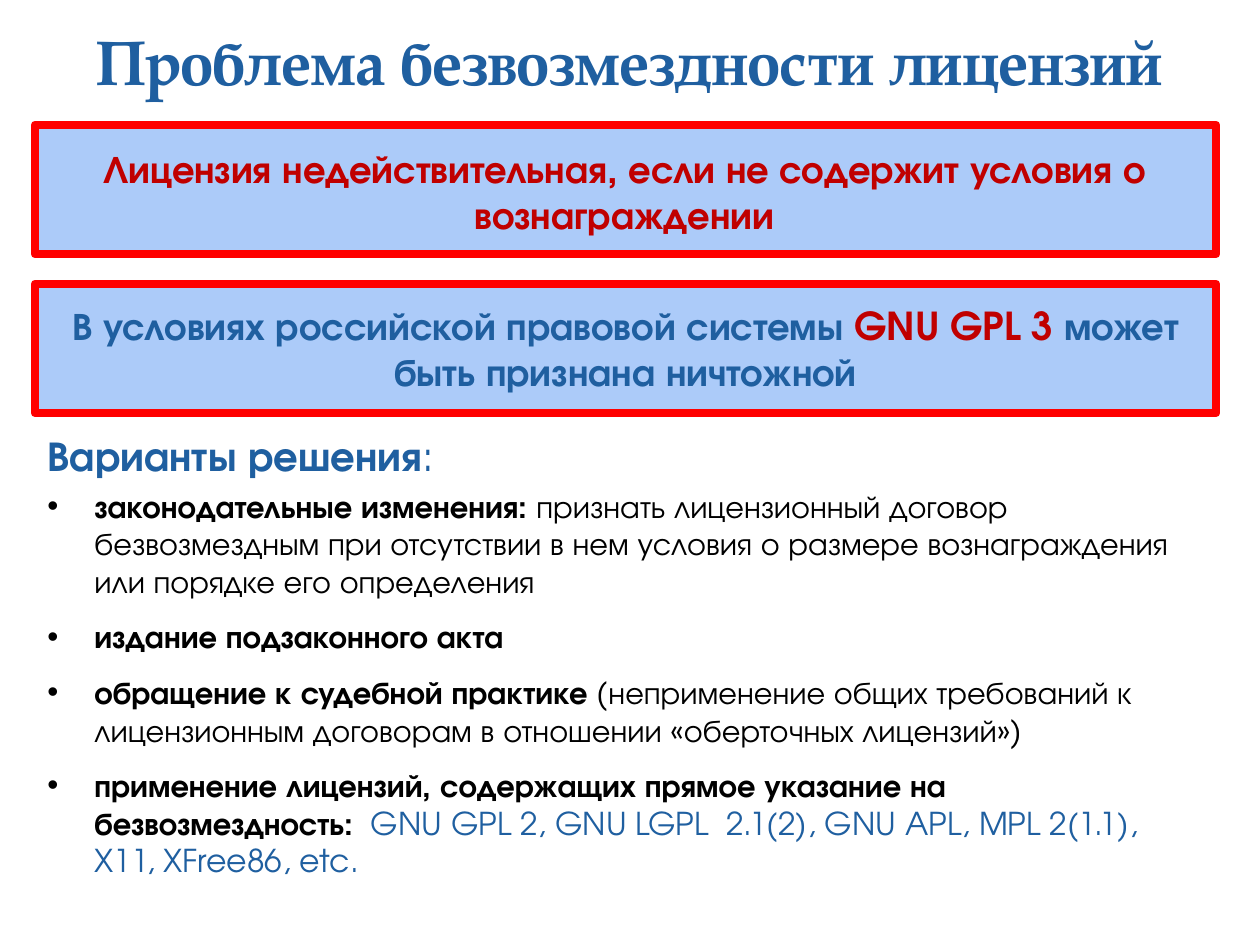
import pptx
import pptx.util
import pptx.dml.color
import pptx.enum.shapes
import pptx.enum.text
import lxml.etree

PX = 914400 / 126
HUES = {"blue": "1F5FA0", "pale": "ACCBF9", "red": "FF0000",
        "dark": "C00000", "black": "000000"}
HEAD = "TeX Gyre Pagella"
BODY = "TeX Gyre Adventor"
ALIGN = pptx.enum.text.PP_ALIGN
ANCHOR = pptx.enum.text.MSO_ANCHOR
FIT = pptx.enum.text.MSO_AUTO_SIZE


def px(*nums):
    return [pptx.util.Emu(round(n * PX)) for n in nums]


def add_runs(par, runs, size, face=BODY):
    """Each run is a tuple of text, colour name and bold flag."""
    for text, hue, bold in runs:
        run = par.add_run()
        run.text = text
        run.font.name = face
        run.font.size = pptx.util.Pt(size)
        run.font.bold = bold
        run.font.color.rgb = pptx.dml.color.RGBColor.from_string(HUES[hue])


deck = pptx.Presentation()
deck.slide_width, deck.slide_height = px(1260, 945)
slide = deck.slides.add_slide(deck.slide_layouts[6])

# Title
title = slide.shapes.add_textbox(*px(0, 16, 1260, 88)).text_frame
title.word_wrap = True
title.vertical_anchor = ANCHOR.BOTTOM
title.paragraphs[0].alignment = ALIGN.CENTER
add_runs(title.paragraphs[0],
         [("Проблема безвозмездности лицензий", "blue", True)], 36, HEAD)

# Framed panels
panels = []
for top in (125, 284):
    panel = slide.shapes.add_shape(
        pptx.enum.shapes.MSO_SHAPE.RECTANGLE, *px(35, top, 1181, 129))
    panel.shadow.inherit = False
    panel.fill.solid()
    panel.fill.fore_color.rgb = pptx.dml.color.RGBColor.from_string(HUES["pale"])
    panel.line.color.rgb = pptx.dml.color.RGBColor.from_string(HUES["red"])
    panel.line.width = pptx.util.Pt(5)
    panels.append(panel)

claim = slide.shapes.add_textbox(*px(64, 139, 1121, 106)).text_frame
claim.word_wrap = True
claim.auto_size = FIT.SHAPE_TO_FIT_TEXT
claim.paragraphs[0].alignment = ALIGN.CENTER
add_runs(claim.paragraphs[0], [
    ("Лицензия недействительная, если не содержит условия о вознаграждении",
     "dark", True)], 22)

risk = panels[1].text_frame
risk.word_wrap = True
risk.vertical_anchor = ANCHOR.MIDDLE
risk.paragraphs[0].alignment = ALIGN.CENTER
add_runs(risk.paragraphs[0], [
    ("В условиях российской правовой системы ", "blue", True),
    ("GNU GPL 3 ", "dark", True),
    ("может быть признана ничтожной", "blue", True)], 22)

# Ways out
ways = slide.shapes.add_textbox(*px(35, 423, 1181, 505)).text_frame
ways.word_wrap = True
ways.auto_size = FIT.SHAPE_TO_FIT_TEXT
add_runs(ways.paragraphs[0],
         [("Варианты решения", "blue", True), (":", "blue", False)], 24)

items = [
    [("законодательные изменения: ", "black", True),
     ("признать лицензионный договор безвозмездным при отсутствии в нем "
      "условия о размере вознаграждения или порядке его определения",
      "black", False)],
    [("издание подзаконного акта", "black", True)],
    [("обращение к судебной практике ", "black", True),
     ("(неприменение общих требований к лицензионным договорам в отношении "
      "«оберточных лицензий»)", "black", False)],
    [("применение лицензий, содержащих прямое указание на "
      "безвозмездность:  ", "black", True),
     ("GNU GPL 2, GNU LGPL  2.1(2), GNU APL, MPL 2(1.1), X11, XFree86, etc.",
      "blue", False)],
]
indent = px(47)[0]
for i, runs in enumerate(items):
    par = ways.add_paragraph()
    par.space_before = pptx.util.Pt(10 if i else 4)
    props = par._p.get_or_add_pPr()
    props.set("marL", str(indent))
    props.set("indent", str(-indent))
    space = props.nsmap["a"]
    font = lxml.etree.SubElement(props, f"{{{space}}}buFont")
    font.set("typeface", "Arial")
    mark = lxml.etree.SubElement(props, f"{{{space}}}buChar")
    mark.set("char", "•")
    add_runs(par, runs, 18)

deck.save("out.pptx")
